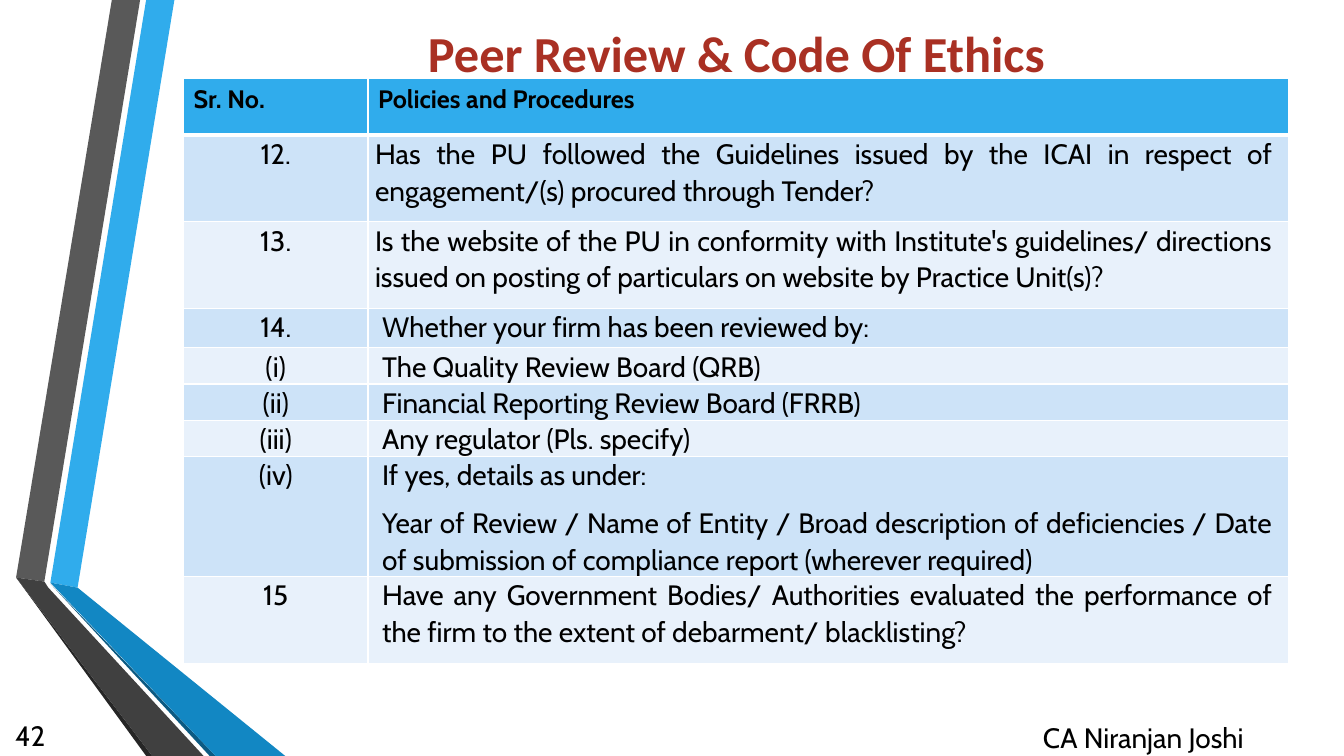
from lxml.etree import SubElement
from pptx import Presentation
from pptx.dml.color import RGBColor
from pptx.enum.text import MSO_ANCHOR, PP_ALIGN
from pptx.oxml.ns import qn
from pptx.util import Pt

PX = 9144
BLACK = RGBColor(0x00, 0x00, 0x00)
WHITE = RGBColor(0xFF, 0xFF, 0xFF)
RED = RGBColor(0xA9, 0x30, 0x23)
BLUE = RGBColor(0x30, 0xAC, 0xEC)
MID_BLUE = RGBColor(0x12, 0x87, 0xC3)
DARK_BLUE = RGBColor(0x0C, 0x5A, 0x82)
GRAY = RGBColor(0x59, 0x59, 0x59)
DARK_GRAY = RGBColor(0x40, 0x40, 0x40)
NEAR_BLACK = RGBColor(0x26, 0x26, 0x26)
BAND_DARK = RGBColor(0xCD, 0xE3, 0xF8)
BAND_LIGHT = RGBColor(0xE8, 0xF1, 0xFB)

RIBBONS = [
    (BLUE, [(50, 578), (77, 583), (173, 0), (145, 0)]),
    (GRAY, [(139, 0), (111, 0), (16, 573), (44, 577)]),
    (NEAR_BLACK, [(16, 573), (145, 750), (151, 750)]),
    (DARK_BLUE, [(50, 579), (208, 750), (214, 750)]),
    (MID_BLUE, [(50, 578), (214, 750), (283, 750), (77, 583)]),
    (DARK_GRAY, [(202, 750), (48, 583), (44, 577), (16, 573), (151, 750)]),
]
COLUMN_WIDTHS = [183, 913]
HEADER_HEIGHT = 56
HEADINGS = ["Sr. No.", "Policies and Procedures"]
QUESTIONS = [
    (86, "12.", 0, ["Has the PU followed the Guidelines issued by the ICAI in respect of "
                    "engagement/(s) procured through Tender?"]),
    (86, "13.", 0, ["Is the website of the PU in conformity with Institute's guidelines/ "
                    "directions issued on posting of particulars on website by Practice Unit(s)?"]),
    (39, "14.", 7, ["Whether your firm has been reviewed by:"]),
    (36, "(i)", 7, ["The Quality Review Board (QRB)"]),
    (36, "(ii)", 7, ["Financial Reporting Review Board (FRRB)"]),
    (36, "(iii)", 7, ["Any regulator (Pls. specify)"]),
    (119, "(iv)", 7, ["If yes, details as under:",
                      "Year of Review / Name of Entity / Broad description of deficiencies / "
                      "Date of submission of compliance report (wherever required)"]),
    (86, "15", 7, ["Have any Government Bodies/ Authorities evaluated the performance of "
                   "the firm to the extent of debarment/ blacklisting?"]),
]


def add_ribbon(slide, color, points):
    """Draw one filled polygon of the side ribbon."""
    builder = slide.shapes.build_freeform(*points[0], scale=PX)
    builder.add_line_segments(points[1:], close=True)
    shape = builder.convert_to_shape()
    shape.shadow.inherit = False
    shape.fill.solid()
    shape.fill.fore_color.rgb = color
    shape.line.fill.background()


def add_run(paragraph, text, size, color=BLACK, font="Cabin", bold=False):
    """Append one styled run to a paragraph."""
    run = paragraph.add_run()
    run.text = text
    run.font.name = font
    run.font.size = Pt(size)
    run.font.bold = bold
    run.font.color.rgb = color


def add_label(slide, box, anchor, text, size, **style):
    """Add a centred one-line text box."""
    frame = slide.shapes.add_textbox(*(length * PX for length in box)).text_frame
    frame.word_wrap = True
    frame.vertical_anchor = anchor
    paragraph = frame.paragraphs[0]
    paragraph.alignment = PP_ALIGN.CENTER
    add_run(paragraph, text, size, **style)


def style_cell(cell, fill, bottom=1):
    """Give a cell white borders and a solid fill."""
    properties = cell._tc.get_or_add_tcPr()
    for side, width in (("L", 1), ("R", 1), ("T", 1), ("B", bottom)):
        border = SubElement(properties, qn(f"a:ln{side}"), w=str(Pt(width)))
        solid = SubElement(border, qn("a:solidFill"))
        SubElement(solid, qn("a:srgbClr"), val=str(WHITE))
    cell.fill.solid()
    cell.fill.fore_color.rgb = fill


def fill_body_cell(cell, texts, alignment, fill, right=7, indent=0):
    """Write the paragraphs of a body cell."""
    style_cell(cell, fill)
    cell.margin_left, cell.margin_right = 7 * PX, right * PX
    cell.margin_top = cell.margin_bottom = 0
    for index, text in enumerate(texts):
        frame = cell.text_frame
        paragraph = frame.add_paragraph() if index else frame.paragraphs[0]
        paragraph.alignment = alignment
        paragraph.line_spacing = 1.07
        paragraph.space_after = Pt(8)
        paragraph._p.get_or_add_pPr().set("marL", str(indent * PX))
        add_run(paragraph, text, 20)


def add_question_table(slide):
    """Add the numbered table of policies and procedures."""
    heights = [HEADER_HEIGHT] + [question[0] for question in QUESTIONS]
    box = (182, 78, sum(COLUMN_WIDTHS), sum(heights))
    table = slide.shapes.add_table(len(heights), len(COLUMN_WIDTHS),
                                   *(length * PX for length in box)).table
    for column, width in zip(table.columns, COLUMN_WIDTHS):
        column.width = width * PX
    for row, height in zip(table.rows, heights):
        row.height = height * PX
    for index, heading in enumerate(HEADINGS):
        cell = table.cell(0, index)
        style_cell(cell, BLUE, bottom=3)
        add_run(cell.text_frame.paragraphs[0], heading, 18, bold=True)
    for row, (_, number, indent, texts) in enumerate(QUESTIONS, 1):
        fill = BAND_DARK if row % 2 else BAND_LIGHT
        fill_body_cell(table.cell(row, 0), [number], PP_ALIGN.CENTER, fill)
        fill_body_cell(table.cell(row, 1), texts, PP_ALIGN.JUSTIFY, fill, 16, indent)


def main():
    """Build the slide and save it."""
    presentation = Presentation()
    presentation.slide_width = 1333 * PX
    presentation.slide_height = 750 * PX
    slide = presentation.slides.add_slide(presentation.slide_layouts[6])
    for color, points in RIBBONS:
        add_ribbon(slide, color, points)
    add_label(slide, (217, 17, 1027, 70), MSO_ANCHOR.MIDDLE, "Peer Review & Code Of Ethics",
              36, color=RED, font="Calibri", bold=True)
    add_question_table(slide)
    add_label(slide, (0, 709, 60, 40), MSO_ANCHOR.MIDDLE, "42", 20)
    add_label(slide, (959, 710, 350, 40), MSO_ANCHOR.TOP, "CA Niranjan Joshi", 20)
    presentation.save("out.pptx")


if __name__ == "__main__":
    main()
